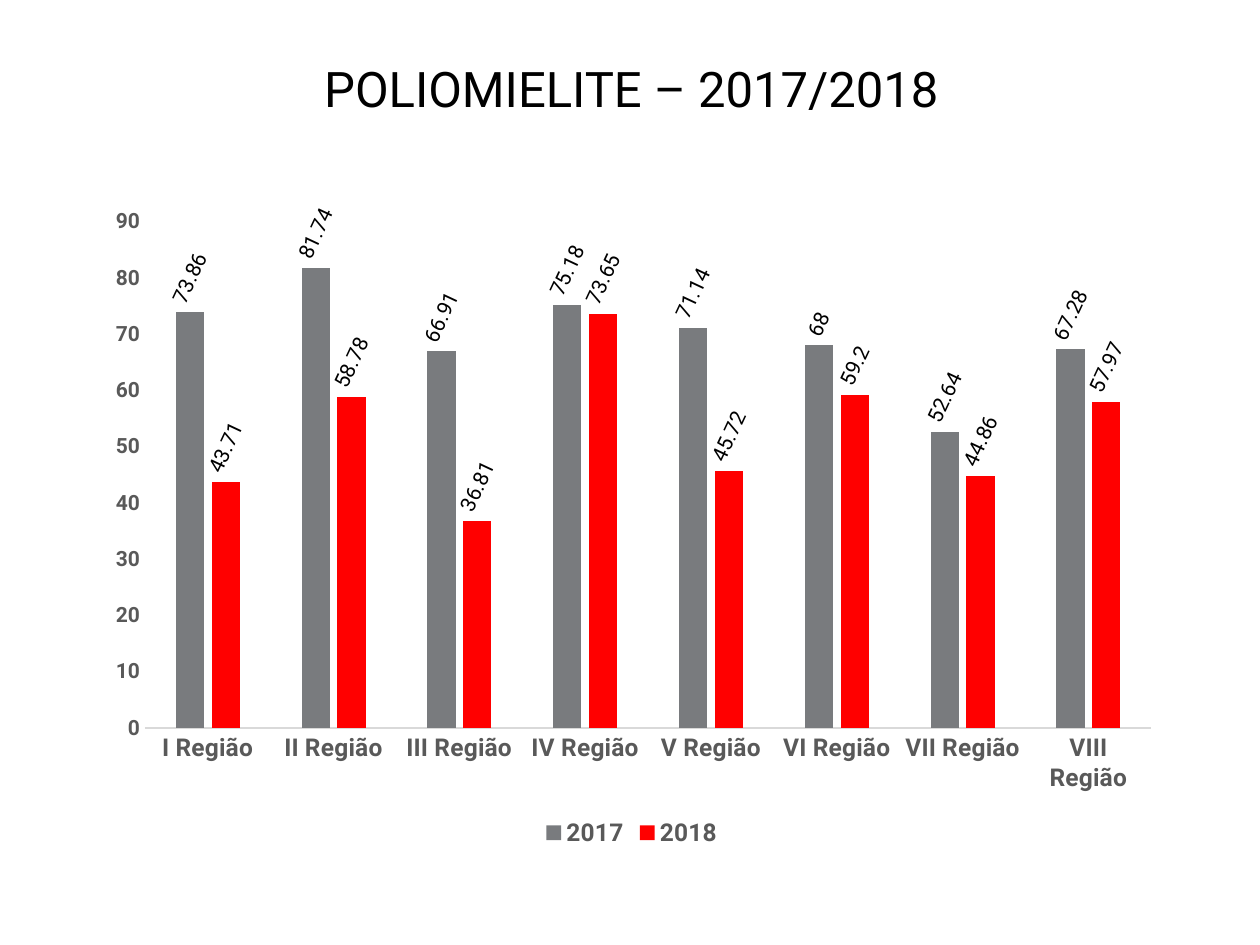
from lxml import etree
from pptx import Presentation
from pptx.chart.data import CategoryChartData
from pptx.dml.color import RGBColor
from pptx.enum.chart import XL_CHART_TYPE as CT, XL_LABEL_POSITION as LP
from pptx.enum.chart import XL_LEGEND_POSITION as LG, XL_TICK_MARK as TM
from pptx.enum.text import MSO_ANCHOR as VA, PP_ALIGN as AL
from pptx.oxml.ns import qn
from pptx.util import Inches, Pt

FONT, BLACK, GRAY, RULE = "Roboto", "000000", "595959", "D9D9D9"
REGIONS = [f"{n} Região" for n in "I II III IV V VI VII VIII".split()]
COVERAGE = {
    "2017": ("797B7E", [73.86, 81.74, 66.91, 75.18, 71.14, 68, 52.64, 67.28]),
    "2018": ("FF0000", [43.71, 58.78, 36.81, 73.65, 45.72, 59.2, 44.86, 57.97]),
}


def rgb(value):
    """Turn a hex string into a colour."""
    return RGBColor.from_string(value)


def style_font(font, size, color=BLACK, bold=False):
    """Set typeface, size, colour and weight."""
    font.name, font.size, font.bold = FONT, Pt(size), bold
    font.color.rgb = rgb(color)


def write(tf, text, align=AL.CENTER, **fmt):
    """Write one formatted paragraph into a text frame."""
    p = tf.paragraphs[0]
    p.alignment = align
    r = p.add_run()
    r.text = text
    style_font(r.font, **fmt)


class Deck:
    """Hold the presentation, its grid and the current slide."""

    def __init__(self, width=10, height=7.5, cols=100, rows=75):
        """Set the slide size and the grid."""
        self.prs = Presentation()
        self.prs.slide_width, self.prs.slide_height = Inches(width), Inches(height)
        self.col = self.prs.slide_width / cols
        self.row = self.prs.slide_height / rows
        self.s = None

    def add_slide(self):
        """Start a blank slide."""
        self.s = self.prs.slides.add_slide(self.prs.slide_layouts[6])

    def box(self, x, y, w, h):
        """Convert columns and rows to lengths."""
        return [round(n) for n in (x * self.col, y * self.row, w * self.col, h * self.row)]

    def text(self, text, at, **fmt):
        """Add a vertically centred text box."""
        tf = self.s.shapes.add_textbox(*self.box(*at)).text_frame
        tf.word_wrap, tf.vertical_anchor = True, VA.MIDDLE
        write(tf, text, **fmt)

    def columns(self, cats, series, at, plot_area, label_angle):
        """Add a clustered column chart with slanted value labels."""
        data = CategoryChartData()
        data.categories = cats
        for name, (_, values) in series.items():
            data.add_series(name, values)
        chart = self.s.shapes.add_chart(CT.COLUMN_CLUSTERED, *self.box(*at), data).chart
        style_font(chart.font, 10)
        chart.has_title = False
        plot = chart.plots[0]
        plot.gap_width, plot.overlap, plot.vary_by_categories = 219, -27, False
        for ser, (color, _) in zip(plot.series, series.values()):
            ser.format.fill.solid()
            ser.format.fill.fore_color.rgb = rgb(color)
            self.labels(ser.data_labels, label_angle)
        self.axis(chart.category_axis, 14)
        self.axis(chart.value_axis, 12)
        line = chart.category_axis.format.line
        line.color.rgb, line.width = rgb(RULE), Pt(0.75)
        chart.value_axis.format.line.fill.background()
        chart.value_axis.minimum_scale, chart.value_axis.maximum_scale = 0, 90
        chart.value_axis.major_unit = 10
        chart.has_legend = True
        chart.legend.position, chart.legend.include_in_layout = LG.BOTTOM, False
        style_font(chart.legend.font, 14, GRAY, True)
        self.place_plot(chart, plot_area)

    def labels(self, dl, angle):
        """Show values above the columns at an angle."""
        dl.show_value, dl.position = True, LP.OUTSIDE_END
        style_font(dl.font, 12)
        body = dl._element.find(qn("c:txPr")).find(qn("a:bodyPr"))
        body.set("rot", str(angle * 60000))
        body.set("vert", "horz")

    def axis(self, axis, size):
        """Style an axis without ticks or gridlines."""
        axis.has_major_gridlines = False
        axis.major_tick_mark = axis.minor_tick_mark = TM.NONE
        style_font(axis.tick_labels.font, size, GRAY, True)

    def place_plot(self, chart, shares):
        """Fix the inner plot area by shares of the chart."""
        area = chart._chartSpace.chart.plotArea
        for old in area.findall(qn("c:layout")):
            area.remove(old)
        layout = etree.Element(qn("c:layout"))
        area.insert(0, layout)
        manual = etree.SubElement(layout, qn("c:manualLayout"))
        rules = [("layoutTarget", "inner"), ("xMode", "edge"), ("yMode", "edge")]
        for tag, val in rules + list(zip("xywh", shares)):
            etree.SubElement(manual, qn(f"c:{tag}"), val=str(val))


def main():
    """Build the slide and save it."""
    deck = Deck()
    deck.add_slide()
    deck.text("POLIOMIELITE – 2017/2018", (9, 4, 82.2, 6), size=28)
    deck.columns(REGIONS, COVERAGE, (7.2, 15.5, 85.9, 52.2),
                 plot_area=(0.05, 0.04, 0.93, 0.77), label_angle=-65)
    deck.prs.save("out.pptx")


if __name__ == "__main__":
    main()
